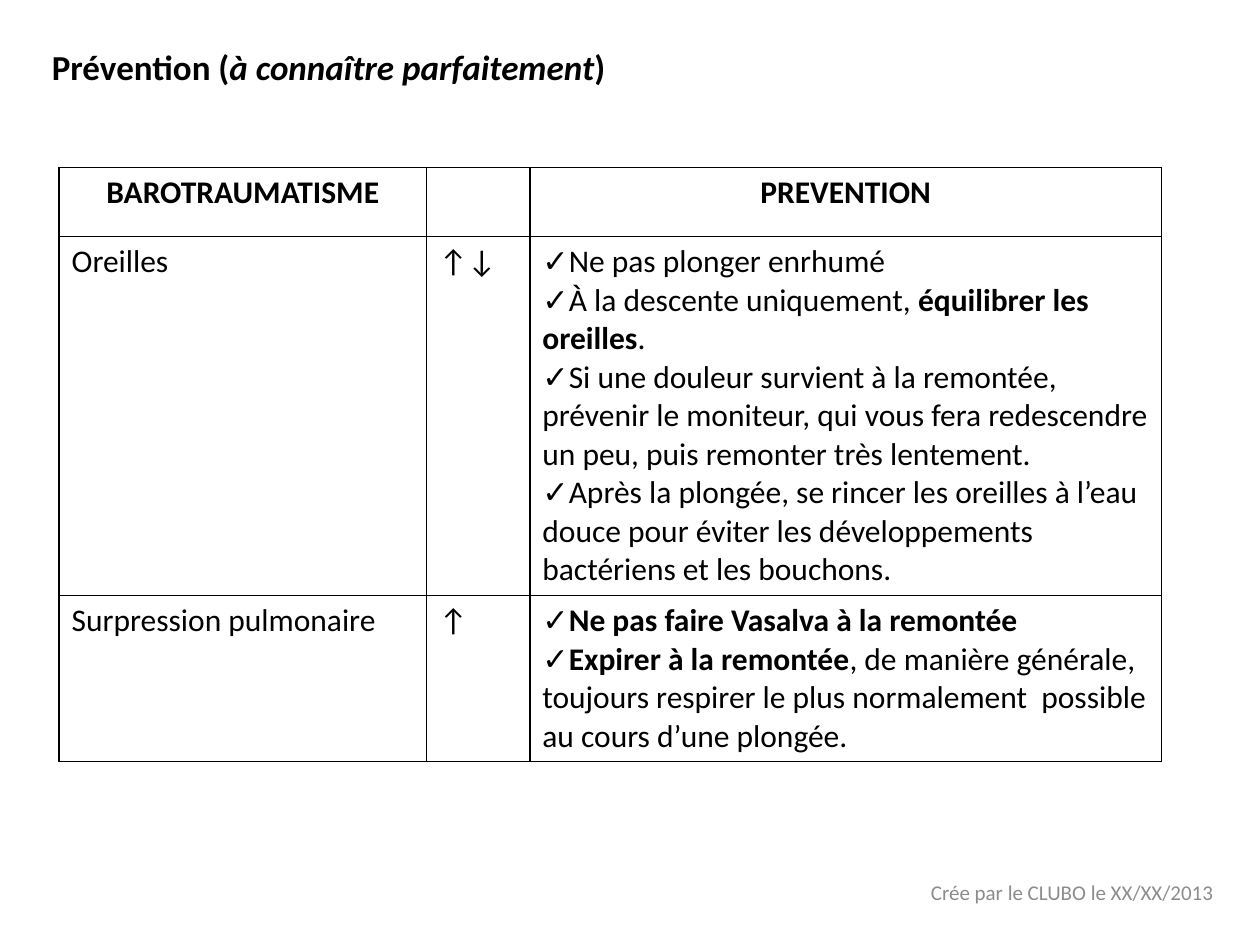
from lxml import etree
from pptx import Presentation
from pptx.dml.color import RGBColor
from pptx.enum import text
from pptx.oxml import ns
from pptx.util import Pt

BLACK = RGBColor(0x00, 0x00, 0x00)
WHITE = RGBColor(0xFF, 0xFF, 0xFF)
GREY = RGBColor(0x8C, 0x8C, 0x8C)
LEFT, CENTER, RIGHT = (text.PP_ALIGN.LEFT, text.PP_ALIGN.CENTER, text.PP_ALIGN.RIGHT)

# Content: a paragraph is a list of (text, style) runs; b is bold, i is italic
TITLE = [("Prévention (", "b"), ("à connaître parfaitement", "bi"), (")", "b")]
FOOTER = [("Crée par le CLUBO le XX/XX/2013", "")]
HEADER = [[[("BAROTRAUMATISME", "b")]], [], [[("PREVENTION", "b")]]]
BODY = [
    [
        [[("Oreilles", "")]],
        [[("↑↓", "")]],
        [
            [("Ne pas plonger enrhumé", "")],
            [("À la descente uniquement, ", ""), ("équilibrer les oreilles", "b"), (".", "")],
            [("Si une douleur survient à la remontée, prévenir le moniteur, "
              "qui vous fera redescendre un peu, puis remonter très lentement.", "")],
            [("Après la plongée, se rincer les oreilles à l’eau douce pour éviter "
              "les développements bactériens et les bouchons.", "")],
        ],
    ],
    [
        [[("Surpression pulmonaire", "")]],
        [[("↑", "")]],
        [
            [("Ne pas faire Vasalva à la remontée", "b")],
            [("Expirer à la remontée", "b"),
             (", de manière générale, toujours respirer le plus normalement  possible "
              "au cours d’une plongée.", "")],
        ],
    ],
]

# Layout in points
TITLE_BOX = (22.5, 22.5, 680, 478)
FOOTER_BOX = (472.5, 495, 228, 29)
TABLE_LEFT, TABLE_TOP = 33.75, 95.75
COLUMN_WIDTHS = (210, 59, 361)
ROW_HEIGHTS = (39.5, 205, 95)


def write_paragraph(paragraph, runs, size, color=BLACK, alignment=LEFT):
    paragraph.alignment = alignment
    for words, style in runs:
        run = paragraph.add_run()
        run.text = words
        formats = {"name": "Calibri", "size": Pt(size),
                   "bold": "b" in style, "italic": "i" in style}
        for key, value in formats.items():
            setattr(run.font, key, value)
        run.font.color.rgb = color


def add_check_bullet(paragraph):
    properties = paragraph._p.get_or_add_pPr()
    properties.set("marL", "0")
    properties.set("indent", "0")
    etree.SubElement(properties, ns.qn("a:buFont")).set("typeface", "Calibri")
    etree.SubElement(properties, ns.qn("a:buChar")).set("char", "✓")


def add_borders(cell):
    properties = cell._tc.get_or_add_tcPr()
    for index, side in enumerate(("lnL", "lnR", "lnT", "lnB")):
        line = etree.Element(ns.qn(f"a:{side}"), w=str(Pt(1)))
        fill = etree.SubElement(line, ns.qn("a:solidFill"))
        etree.SubElement(fill, ns.qn("a:srgbClr")).set("val", str(BLACK))
        properties.insert(index, line)


def add_text(slide, box, runs, size, anchor, space_before=0, **style):
    frame = slide.shapes.add_textbox(*map(Pt, box)).text_frame
    frame.word_wrap = True
    frame.vertical_anchor = anchor
    frame.paragraphs[0].space_before = Pt(space_before)
    write_paragraph(frame.paragraphs[0], runs, size, **style)


def fill_cell(cell, paragraphs, alignment, bulleted):
    cell.fill.solid()
    cell.fill.fore_color.rgb = WHITE
    add_borders(cell)
    frame = cell.text_frame
    for index, runs in enumerate(paragraphs):
        paragraph = frame.add_paragraph() if index else frame.paragraphs[0]
        write_paragraph(paragraph, runs, 18, alignment=alignment)
        if bulleted:
            add_check_bullet(paragraph)


def add_prevention_table(slide):
    rows = [HEADER] + BODY
    table = slide.shapes.add_table(
        len(rows), len(COLUMN_WIDTHS), Pt(TABLE_LEFT), Pt(TABLE_TOP),
        Pt(sum(COLUMN_WIDTHS)), Pt(sum(ROW_HEIGHTS))).table
    table.first_row = table.horz_banding = False
    for column, width in zip(table.columns, COLUMN_WIDTHS):
        column.width = Pt(width)
    for row, height in zip(table.rows, ROW_HEIGHTS):
        row.height = Pt(height)
    for r, cells in enumerate(rows):
        for c, paragraphs in enumerate(cells):
            fill_cell(table.cell(r, c), paragraphs,
                      alignment=LEFT if r else CENTER, bulleted=r > 0 and c == 2)


def main():
    presentation = Presentation()
    presentation.slide_width, presentation.slide_height = Pt(720), Pt(540)
    slide = presentation.slides.add_slide(presentation.slide_layouts[6])

    # Title and footer
    add_text(slide, TITLE_BOX, TITLE, 20, text.MSO_ANCHOR.TOP, space_before=4)
    add_text(slide, FOOTER_BOX, FOOTER, 12, text.MSO_ANCHOR.MIDDLE,
             color=GREY, alignment=RIGHT)

    # Table of barotraumas and how to prevent them
    add_prevention_table(slide)
    presentation.save("out.pptx")


if __name__ == "__main__":
    main()
